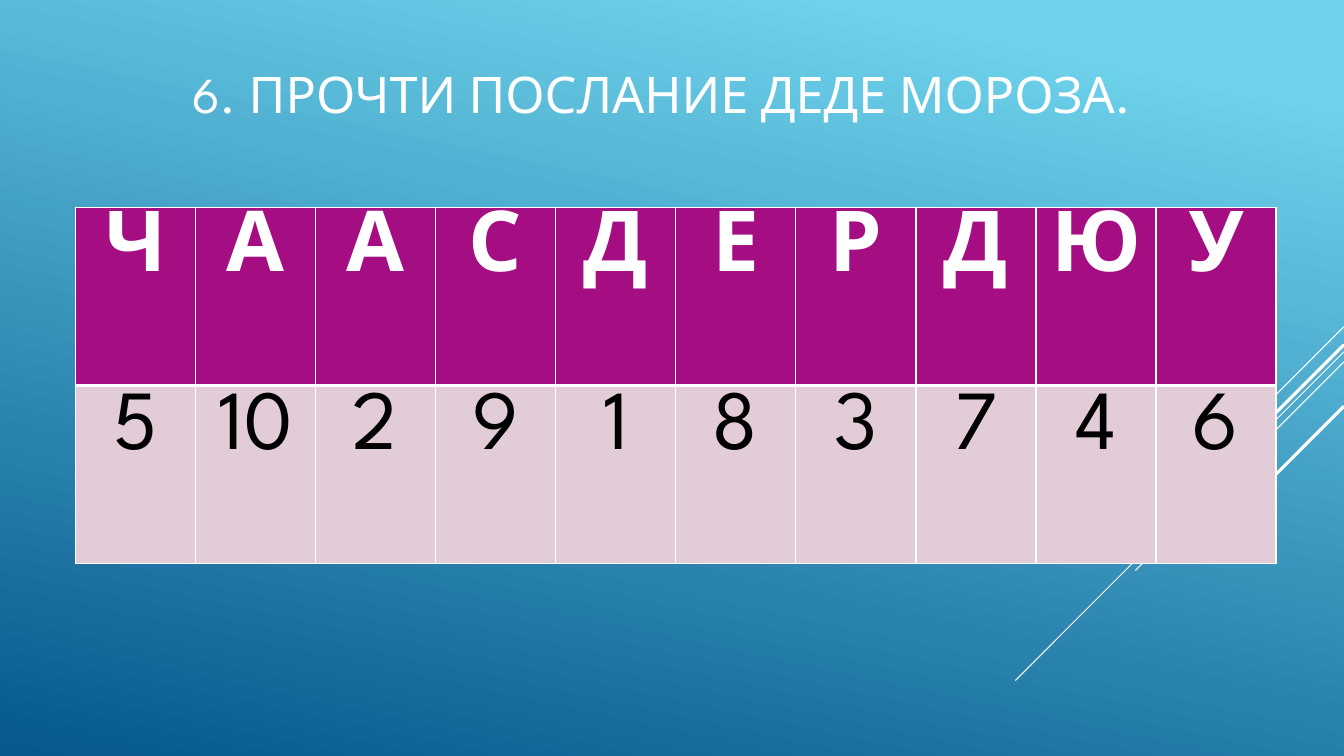
"""Build the slide with the letter-and-number puzzle table."""
import pptx
import pptx.util
import pptx.dml.color
import pptx.enum.shapes
import pptx.enum.text
import pptx.oxml
import pptx.oxml.ns
from lxml import etree

Pt = pptx.util.Pt
CENTER = pptx.enum.text.PP_ALIGN.CENTER
MIDDLE = pptx.enum.text.MSO_ANCHOR.MIDDLE
FONT = "League Spartan"
COLORS = {"sky": "6ED2EB", "deep": "06588E", "white": "FFFFFF",
          "black": "000000", "header": "A50E82", "body": "E1CCD8"}
WIDTH, HEIGHT = 960, 540


def rgb(name):
    return pptx.dml.color.RGBColor.from_string(COLORS[name])


def format_paragraph(p, size, color, bold):
    p.alignment = CENTER
    p.font.name = FONT
    p.font.size = Pt(size)
    p.font.bold = bold
    p.font.color.rgb = rgb(color)


prs = pptx.Presentation()
prs.slide_width, prs.slide_height = Pt(WIDTH), Pt(HEIGHT)
s = prs.slides.add_slide(prs.slide_layouts[5])

fill = s.background.fill
fill.gradient()
fill.gradient_angle = 258
for stop, color, position in zip(fill.gradient_stops, ("sky", "deep"), (0.1, 1)):
    stop.color.rgb = rgb(color)
    stop.position = position

diagonals = [(233.3, 72, 0.75), (251.3, 234.7, 0.75), (258.5, 149, 0.75),
             (246.2, 137.5, 2.25), (290.2, 100, 2.25)]
for top, run, weight in diagonals:
    line = s.shapes.add_connector(pptx.enum.shapes.MSO_CONNECTOR.STRAIGHT,
                                  Pt(WIDTH), Pt(top), Pt(WIDTH - run), Pt(top + run))
    line.line.color.rgb = rgb("white")
    line.line.width = Pt(weight)
    etree.SubElement(line._element.spPr, pptx.oxml.ns.qn("a:effectLst"))

title = s.shapes.title
title.left, title.top, title.width, title.height = Pt(54), Pt(28.8), Pt(846.7), Pt(76.3)
tf = title.text_frame
tf.text = "6. ПРОЧТИ ПОСЛАНИЕ ДЕДЕ МОРОЗА. "
tf.word_wrap = True
tf.vertical_anchor = MIDDLE
format_paragraph(tf.paragraphs[0], 36, "white", False)

rows = [("ЧААСДЕРДЮУ", "header", "white", True, 3),
        ((5, 10, 2, 9, 1, 8, 3, 7, 4, 6), "body", "black", False, 1)]
table = s.shapes.add_table(2, 10, Pt(54), Pt(148.3), Pt(857.5), Pt(254.2)).table
for i, (values, background, color, bold, bottom) in enumerate(rows):
    top = rows[i - 1][4] if i else 1
    for j, value in enumerate(values):
        cell = table.cell(i, j)
        cell.text = str(value)
        cell.fill.solid()
        cell.fill.fore_color.rgb = rgb(background)
        format_paragraph(cell.text_frame.paragraphs[0], 60, color, bold)
        tcPr = cell._tc.get_or_add_tcPr()
        for k, (side, weight) in enumerate(zip("LRTB", (1, 1, top, bottom))):
            tcPr.insert(k, pptx.oxml.parse_xml(
                f'<a:ln{side} {pptx.oxml.ns.nsdecls("a")} w="{Pt(weight)}"><a:solidFill>'
                f'<a:srgbClr val="{COLORS["white"]}"/></a:solidFill></a:ln{side}>'))

prs.save("out.pptx")
